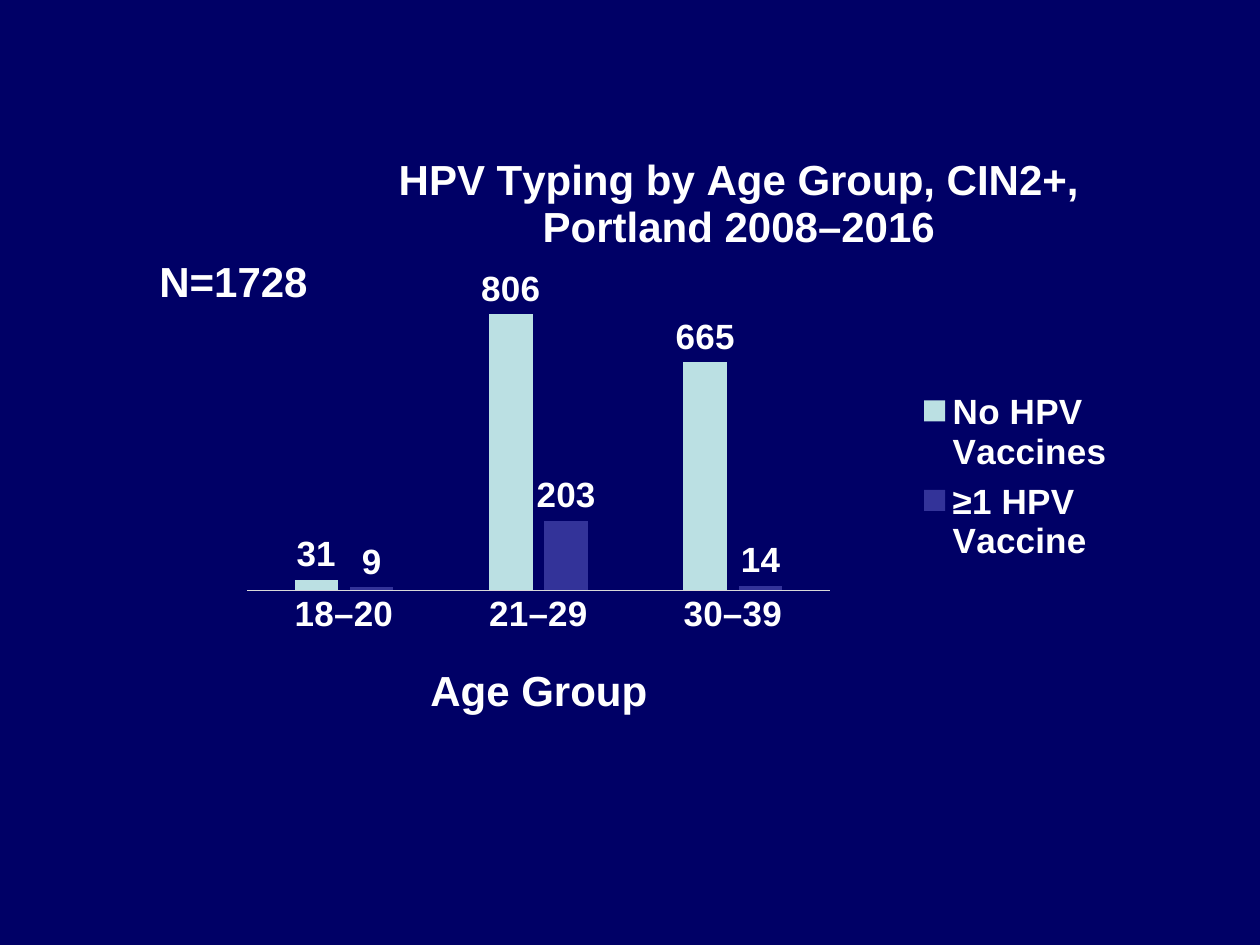
"""Build a slide with a column chart of HPV typing by age group."""
from lxml import etree
from pptx import Presentation, util as u
from pptx.chart.data import CategoryChartData
from pptx.dml.color import RGBColor
from pptx.enum import chart as c, text
from pptx.oxml import ns

PX = 914400 // 126
FONT = "Arial"
COLORS = {"page": "000066", "text": "FFFFFF", "axis": "D9D9D9",
          "none": "BBE0E3", "some": "333399"}
TITLE = ["HPV Typing by Age Group, CIN2+,", "Portland 2008–2016"]
AXIS_TITLE = ["Age Group"]
NOTE = "N=1728"
AGES = ["18–20", "21–29", "30–39"]
SERIES = [("No HPV Vaccines", (31, 806, 665), "none"),
          ("≥1 HPV Vaccine", (9, 203, 14), "some")]
CHART_AT = (219, 145, 926, 594)
NOTE_AT = (147, 249, 175, 63)
LAYOUTS = {"title": (0.19, 0.01), "axis": (0.22, 0.86),
           "plot": (0.03, 0.23, 0.63, 0.52), "legend": (0.75, 0.4, 0.22, 0.32)}


def color(name):
    return RGBColor.from_string(COLORS[name])


def px(lengths):
    return [length * PX for length in lengths]


def style(font, size):
    font.name, font.size, font.bold = FONT, u.Pt(size), True
    font.color.rgb = color("text")


def place(element, name, before):
    """Give a chart part a manual layout ahead of the first tag found."""
    for old in element.findall(ns.qn("c:layout")):
        element.remove(old)
    layout = etree.Element(ns.qn("c:layout"))
    manual = etree.SubElement(layout, ns.qn("c:manualLayout"))
    settings = [("xMode", "edge"), ("yMode", "edge")]
    if name == "plot":
        settings.insert(0, ("layoutTarget", "inner"))
    settings += zip("xywh", LAYOUTS[name])
    for tag, value in settings:
        etree.SubElement(manual, ns.qn("c:" + tag)).set("val", str(value))
    follower = next(child for child in element if child.tag in map(ns.qn, before))
    follower.addprevious(layout)


def write_title(title, lines, name):
    frame = title.text_frame
    for index, line in enumerate(lines):
        para = frame.paragraphs[0] if index == 0 else frame.add_paragraph()
        para.text = line
        style(para.font, 24)
        style(para.runs[0].font, 24)
    place(title._element, name, ["c:overlay"])


def add_age_chart(page):
    data = CategoryChartData()
    data.categories = AGES
    for name, values, _ in SERIES:
        data.add_series(name, values)
    chart = page.shapes.add_chart(
        c.XL_CHART_TYPE.COLUMN_CLUSTERED, *px(CHART_AT), data).chart
    style(chart.font, 20)
    write_title(chart.chart_title, TITLE, "title")

    ages = chart.category_axis
    ages.major_tick_mark = c.XL_TICK_MARK.NONE
    ages.format.line.color.rgb = color("axis")
    ages.format.line.width = u.Pt(0.75)
    style(ages.tick_labels.font, 20)
    write_title(ages.axis_title, AXIS_TITLE, "axis")

    counts = chart.value_axis
    counts.visible = counts.has_major_gridlines = False
    counts.minimum_scale, counts.maximum_scale = 0, 900

    plot = chart.plots[0]
    plot.vary_by_categories = False
    plot.gap_width, plot.overlap = 219, -27
    for series, (_, _, fill) in zip(plot.series, SERIES):
        series.format.fill.solid()
        series.format.fill.fore_color.rgb = color(fill)
        labels = series.data_labels
        labels.show_value = True
        labels.position = c.XL_LABEL_POSITION.OUTSIDE_END
        style(labels.font, 20)
    place(plot._element.getparent(), "plot", ["c:barChart"])

    chart.has_legend = True
    legend = chart.legend
    legend.position = c.XL_LEGEND_POSITION.RIGHT
    legend.include_in_layout = False
    style(legend.font, 20)
    place(legend._element, "legend", ["c:overlay"])


def add_note(page):
    frame = page.shapes.add_textbox(*px(NOTE_AT)).text_frame
    frame.word_wrap = False
    frame.auto_size = text.MSO_AUTO_SIZE.SHAPE_TO_FIT_TEXT
    para = frame.paragraphs[0]
    para.text = NOTE
    style(para.font, 24)


def main():
    deck = Presentation()
    deck.slide_width, deck.slide_height = px((1260, 945))
    page = deck.slides.add_slide(deck.slide_layouts[6])
    page.background.fill.solid()
    page.background.fill.fore_color.rgb = color("page")
    add_age_chart(page)
    add_note(page)
    deck.save("out.pptx")


if __name__ == "__main__":
    main()
